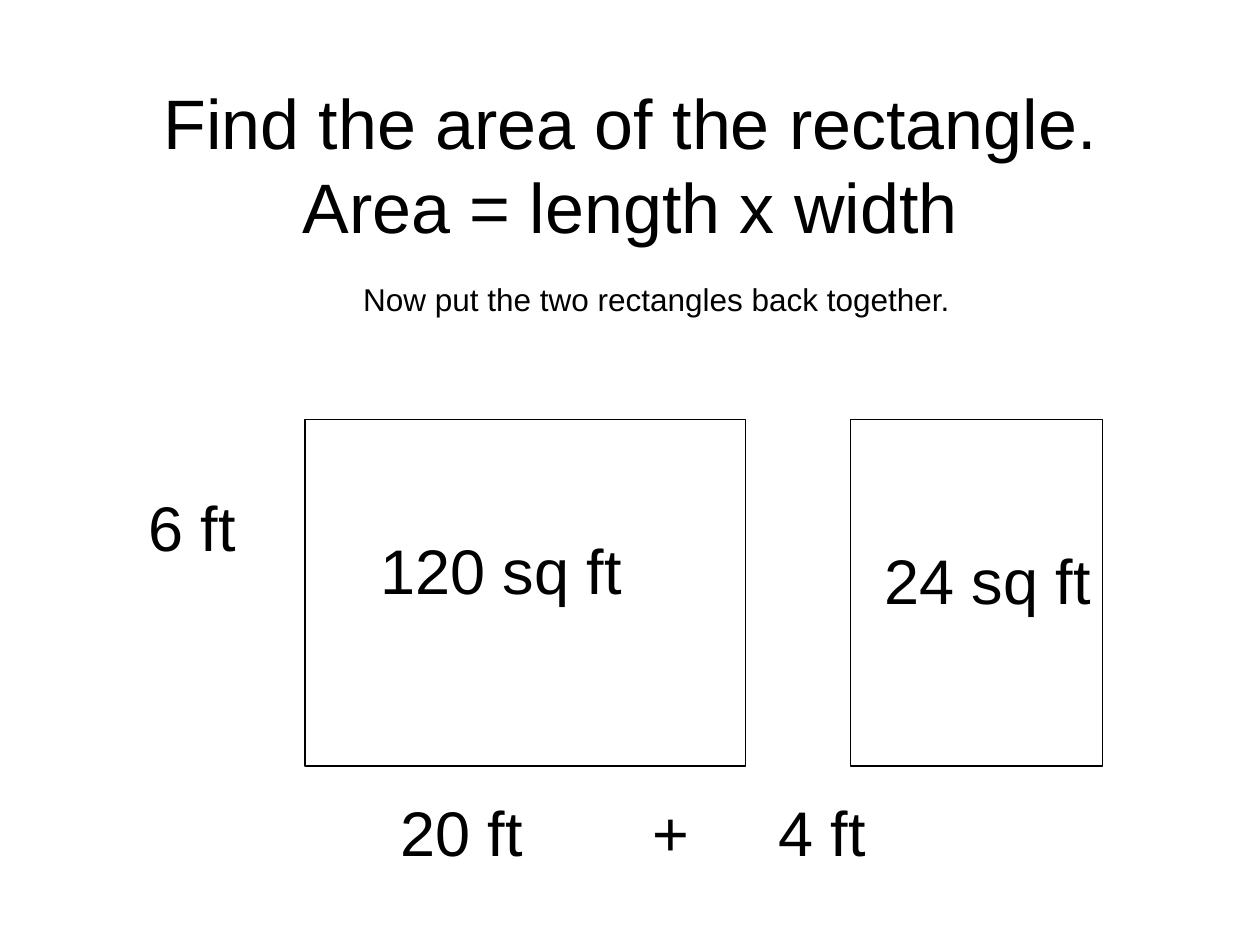
"""Build a slide that joins two rectangles to find a total area."""
from pptx import Presentation
from pptx import util as u
from pptx.dml.color import RGBColor
from pptx.enum import shapes, text

THEME = {
    "font": "Arial",
    "ink": RGBColor(0, 0, 0),
    "paper": RGBColor(255, 255, 255),
    "title": 40,
    "label": 36,
    "note": 18,
    "outline": 0.75,
}
LEFT, CENTER = text.PP_ALIGN.LEFT, text.PP_ALIGN.CENTER

HEADING = ["Find the area of the rectangle.", "Area = length x width"]
HEADING_BOX = (0.75, 0.67, 8.5, 1.25)

RECT_TOP, RECT_HEIGHT = 3.33, 2.75
RECTANGLES = [(6.75, 2), (2.42, 3.5)]

LABELS = [
    ("6 ft", (1.08, 3.83, 1.42, 0.7), "label", LEFT),
    ("20 ft\t\t\t+ \t\t4 ft", (3.08, 6.25, 6.25, 0.7), "label", LEFT),
    ("Now put the two rectangles back together.", (1.5, 2.17, 7.42, 0.5), "note", CENTER),
    ("120 sq ft", (2.92, 4.17, 2.75, 0.7), "label", LEFT),
    ("24 sq ft", (6.92, 4.25, 2.58, 0.7), "label", LEFT),
]


def inches(box):
    return [u.Inches(length) for length in box]


def write(frame, lines, size, align, anchor):
    frame.word_wrap = True
    frame.auto_size = text.MSO_AUTO_SIZE.NONE
    frame.vertical_anchor = anchor
    paragraph = frame.paragraphs[0]
    paragraph.alignment = align
    for index, line in enumerate(lines):
        if index:
            paragraph.add_line_break()
        run = paragraph.add_run()
        run.text = line
        run.font.name = THEME["font"]
        run.font.size = u.Pt(THEME[size])
        run.font.color.rgb = THEME["ink"]


def add_heading(slide):
    heading = slide.shapes.title
    heading.left, heading.top, heading.width, heading.height = inches(HEADING_BOX)
    write(heading.text_frame, HEADING, "title", CENTER, text.MSO_ANCHOR.MIDDLE)


def add_rectangle(slide, left, width):
    rectangle = slide.shapes.add_shape(
        shapes.MSO_SHAPE.RECTANGLE, *inches((left, RECT_TOP, width, RECT_HEIGHT))
    )
    rectangle.shadow.inherit = False
    rectangle.fill.solid()
    rectangle.fill.fore_color.rgb = THEME["paper"]
    rectangle.line.color.rgb = THEME["ink"]
    rectangle.line.width = u.Pt(THEME["outline"])


def add_label(slide, words, box, size, align):
    label = slide.shapes.add_textbox(*inches(box))
    write(label.text_frame, [words], size, align, text.MSO_ANCHOR.TOP)


def main():
    deck = Presentation()
    deck.slide_width, deck.slide_height = inches((10, 7.5))
    slide = deck.slides.add_slide(deck.slide_layouts.get_by_name("Title Only"))
    add_heading(slide)
    for left, width in RECTANGLES:
        add_rectangle(slide, left, width)
    for label in LABELS:
        add_label(slide, *label)
    deck.save("out.pptx")


if __name__ == "__main__":
    main()
